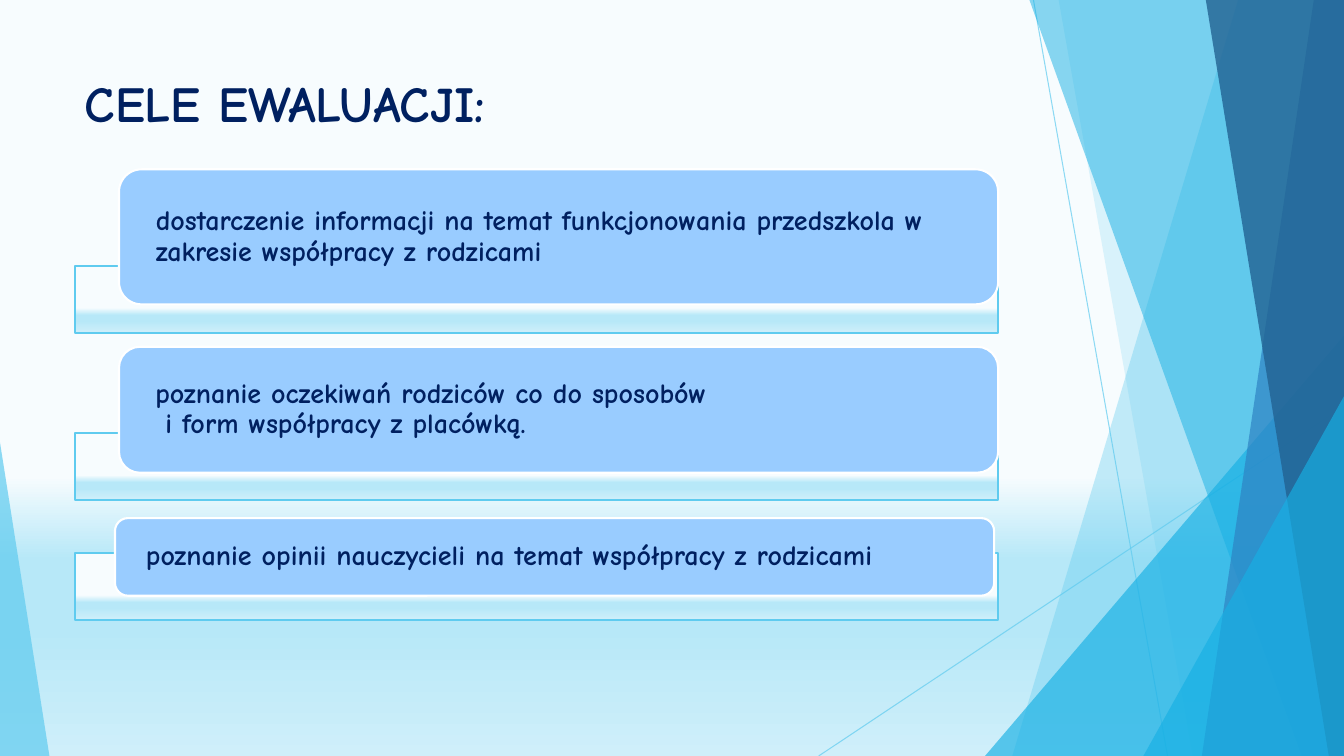
from lxml import etree
from pptx import Presentation
from pptx.dml.color import RGBColor
from pptx.enum.shapes import MSO_CONNECTOR, MSO_SHAPE
from pptx.enum.text import MSO_ANCHOR, PP_ALIGN
from pptx.oxml.ns import qn
from pptx.util import Inches, Pt

STRAIGHT = MSO_CONNECTOR.STRAIGHT
RECTANGLE = MSO_SHAPE.RECTANGLE
ROUNDED = MSO_SHAPE.ROUNDED_RECTANGLE
TRIANGLE = MSO_SHAPE.ISOSCELES_TRIANGLE
TOP, MIDDLE = MSO_ANCHOR.TOP, MSO_ANCHOR.MIDDLE
LEFT = PP_ALIGN.LEFT

NAVY = RGBColor(0x00, 0x20, 0x60)
SKY = RGBColor(0x5F, 0xCB, 0xEF)
CYAN = RGBColor(0x17, 0xB0, 0xE4)
BLUE = RGBColor(0x2E, 0x83, 0xC3)
STEEL = RGBColor(0x22, 0x62, 0x92)
PALE_BLUE = RGBColor(0x99, 0xCC, 0xFF)
WHITE = RGBColor(0xFF, 0xFF, 0xFF)
ICE = RGBColor(0xF7, 0xFC, 0xFE)
AQUA = RGBColor(0xB7, 0xE8, 0xF8)
MIST = RGBColor(0xCF, 0xEF, 0xFA)

FONT = "Comic Neue"
WIDTH, HEIGHT = 13.33, 7.5
GRADIENT = [(63, ICE), (74, AQUA), (83, AQUA), (100, MIST)]

# Right-hand facets: top x, bottom x, colour, opacity in percent
BACK_FACETS = [(12.28, 10.04, SKY, 36), (10.5, 11.83, SKY, 20)]
FRONT_FACETS = [(10.21, 12.91, CYAN, 50), (13.03, 11.92, BLUE, 70),
                (11.96, 13.18, STEEL, 80)]

# Goals: bar top, box left, box top, box height, text inset, wording
GOALS = [
    (2.64, 1.18, 1.68, 1.34, 0.3,
     "dostarczenie informacji na temat funkcjonowania przedszkola "
     "w zakresie współpracy z rodzicami"),
    (4.3, 1.18, 3.44, 1.25, 0.3,
     "poznanie oczekiwań rodziców co do sposobów\v"
     " i form współpracy z placówką."),
    (5.49, 1.14, 5.14, 0.77, 0.27,
     "poznanie opinii nauczycieli na temat współpracy z rodzicami"),
]


def set_gradient(fill, owner):
    """Give the fill of the owner element the vertical gradient."""
    fill.gradient()
    gradient = next(owner.iter(qn("a:gradFill")))
    stops = gradient.find(qn("a:gsLst"))
    for stop in list(stops):
        stops.remove(stop)
    for position, color in GRADIENT:
        stop = etree.SubElement(stops, qn("a:gs"), pos=str(position * 1000))
        etree.SubElement(stop, qn("a:srgbClr"), val=str(color))
    gradient.find(qn("a:lin")).set("ang", str(90 * 60000))


def set_opacity(owner, percent):
    color = next(owner.iter(qn("a:srgbClr")))
    etree.SubElement(color, qn("a:alpha"), val=str(percent * 1000))


def paint_facet(shape, color, opacity):
    shape.shadow.inherit = False
    shape.fill.solid()
    shape.fill.fore_color.rgb = color
    set_opacity(shape.element.spPr, opacity)
    shape.line.fill.background()


def add_facet(page, top_x, bottom_x, color, opacity):
    """Add a four-sided facet that reaches the right edge of the page."""
    builder = page.shapes.build_freeform(Inches(top_x), 0, scale=1.0)
    builder.add_line_segments([
        (Inches(WIDTH), 0),
        (Inches(WIDTH), Inches(HEIGHT)),
        (Inches(bottom_x), Inches(HEIGHT)),
    ], close=True)
    paint_facet(builder.convert_to_shape(), color, opacity)


def add_triangle(page, left, top, width, apex, color, opacity):
    """Add a triangle that stands on the bottom edge of the page."""
    triangle = page.shapes.add_shape(
        TRIANGLE, Inches(left), Inches(top), Inches(width), Inches(HEIGHT - top))
    triangle.adjustments[0] = apex
    paint_facet(triangle, color, opacity)


def add_thin_line(page, x1, y1, x2, y2):
    line = page.shapes.add_connector(
        STRAIGHT, Inches(x1), Inches(y1), Inches(x2), Inches(y2))
    line.line.color.rgb = SKY
    line.line.width = Pt(0.75)
    properties = line.element.spPr
    set_opacity(properties, 70)
    etree.SubElement(properties, qn("a:effectLst"))


def format_text(para, size):
    para.alignment = LEFT
    para.font.name = FONT
    para.font.size = Pt(size)
    para.font.bold = True
    para.font.color.rgb = NAVY


def add_box(page, kind, left, top, width, height, line_color):
    box = page.shapes.add_shape(
        kind, Inches(left), Inches(top), Inches(width), Inches(height))
    box.shadow.inherit = False
    box.line.color.rgb = line_color
    box.line.width = Pt(1.5)
    return box


def add_goal(page, bar_top, left, top, height, inset, wording):
    """Add a gradient bar and the rounded box with its goal."""
    bar = add_box(page, RECTANGLE, 0.74, bar_top, 9.16, 0.66, SKY)
    set_gradient(bar.fill, bar.element.spPr)
    box = add_box(page, ROUNDED, left, top, 8.72, height, WHITE)
    box.fill.solid()
    box.fill.fore_color.rgb = PALE_BLUE
    frame = box.text_frame
    frame.word_wrap = True
    frame.vertical_anchor = MIDDLE
    frame.margin_left = frame.margin_right = Inches(inset)
    frame.margin_top = frame.margin_bottom = 0
    para = frame.paragraphs[0]
    para.text = wording
    para.line_spacing = 0.9
    format_text(para, 20)


def set_title(page, wording):
    title = page.shapes.title
    title.left, title.top = Inches(0.74), Inches(0.67)
    title.width, title.height = Inches(9.4), Inches(1.44)
    title.text_frame.vertical_anchor = TOP
    para = title.text_frame.paragraphs[0]
    para.text = wording
    format_text(para, 36)


def main():
    deck = Presentation()
    deck.slide_width, deck.slide_height = Inches(WIDTH), Inches(HEIGHT)
    page = deck.slides.add_slide(deck.slide_layouts[5])
    set_gradient(page.background.fill, page.element)

    # Decoration along the edges
    add_thin_line(page, 10.25, 0, 11.58, HEIGHT)
    add_thin_line(page, WIDTH, 4.03, 8.12, HEIGHT)
    for facet in BACK_FACETS:
        add_facet(page, *facet)
    add_triangle(page, 9.77, 3.33, 3.56, 1, CYAN, 66)
    for facet in FRONT_FACETS:
        add_facet(page, *facet)
    add_triangle(page, 11.34, 3.93, 1.99, 1, CYAN, 66)
    add_triangle(page, 0, 4.39, 0.49, 0, SKY, 70)

    # Title and goals
    set_title(page, "CELE EWALUACJI:")
    for goal in GOALS:
        add_goal(page, *goal)

    deck.save("out.pptx")


if __name__ == "__main__":
    main()
